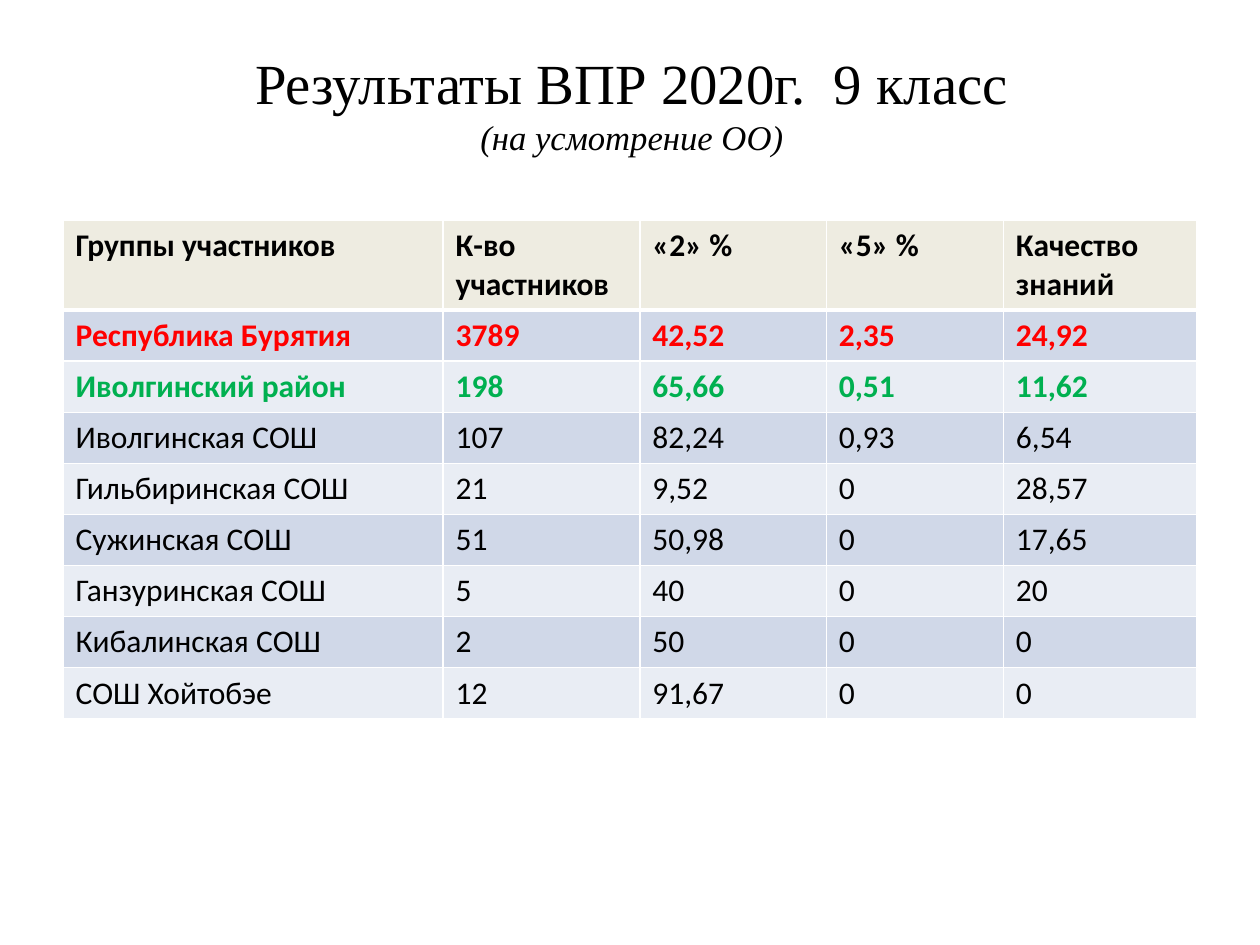
from lxml import etree
from pptx import Presentation
from pptx import util as u
from pptx.dml.color import RGBColor
from pptx.enum import text
from pptx.oxml.ns import qn

Pt = u.Pt

HEAD = ["Группы участников", "К-во участников", "«2» %", "«5» %", "Качество знаний"]
ROWS = [
    ["Республика Бурятия", "3789", "42,52", "2,35", "24,92"],
    ["Иволгинский район", "198", "65,66", "0,51", "11,62"],
    ["Иволгинская СОШ", "107", "82,24", "0,93", "6,54"],
    ["Гильбиринская СОШ", "21", "9,52", "0", "28,57"],
    ["Сужинская СОШ", "51", "50,98", "0", "17,65"],
    ["Ганзуринская СОШ", "5", "40", "0", "20"],
    ["Кибалинская СОШ", "2", "50", "0", "0"],
    ["СОШ Хойтобэе", "12", "91,67", "0", "0"],
]
WIDTHS = [217.2, 112.4, 106.6, 101.2, 110.3]
BANDS = ["D0D8E8", "E9EDF4"]
MARKED = {1: "FF0000", 2: "00B050"}


def paint(fill, tone):
    fill.solid()
    fill.fore_color.rgb = RGBColor.from_string(tone)


def style(font, face, size, tone, bold=False):
    font.name = face
    font.size = Pt(size)
    font.bold = bold
    paint(font.fill, tone)


def edge(cell, side, width, tone):
    props = cell._tc.get_or_add_tcPr()
    line = etree.Element(qn("a:" + side), w=str(Pt(width)))
    fill = etree.SubElement(line, qn("a:solidFill"))
    etree.SubElement(fill, qn("a:srgbClr"), val=tone)
    props.insert(len(props) - 1, line)


def add_title(slide, main, note):
    title = slide.shapes.title
    title.left, title.top, title.width, title.height = map(Pt, (36, 21.6, 650, 74.2))
    frame = title.text_frame
    frame.word_wrap = True
    frame.auto_size = text.MSO_AUTO_SIZE.NONE
    frame.vertical_anchor = text.MSO_ANCHOR.MIDDLE
    para = frame.paragraphs[0]
    para.alignment = text.PP_ALIGN.CENTER
    style(para.font, "Times New Roman", 32.4, "000000")
    para.add_run().text = main
    para.add_line_break()
    run = para.add_run()
    run.text = note
    run.font.size = Pt(19.8)
    run.font.italic = True


def fill_cell(cell, words, back, tone, bold, base):
    cell.text = words
    style(cell.text_frame.paragraphs[0].font, "Calibri", 18, tone, bold)
    paint(cell.fill, back)
    for side, width in (("lnL", 1), ("lnR", 1), ("lnT", 1), ("lnB", base)):
        edge(cell, side, width, "FFFFFF")


def add_grid(slide):
    rows = [HEAD] + ROWS
    grid = slide.shapes.add_table(
        len(rows), len(HEAD), Pt(36), Pt(126), Pt(sum(WIDTHS)), Pt(284.8)
    ).table
    for col, width in zip(grid.columns, WIDTHS):
        col.width = Pt(width)
    for i, row in enumerate(rows):
        grid.rows[i].height = Pt(29.2 if i else 51.2)
        back = BANDS[(i - 1) % 2] if i else "EEECE1"
        base = 1 if i else 3
        for j, words in enumerate(row):
            tone = MARKED.get(i, "000000")
            fill_cell(grid.cell(i, j), words, back, tone, i < 3, base)


def main():
    deck = Presentation()
    deck.slide_width, deck.slide_height = Pt(720), Pt(540)
    slide = deck.slides.add_slide(deck.slide_layouts[5])
    add_title(slide, "Результаты ВПР 2020г.  9 класс", "(на усмотрение ОО)")
    add_grid(slide)
    deck.save("out.pptx")


if __name__ == "__main__":
    main()
